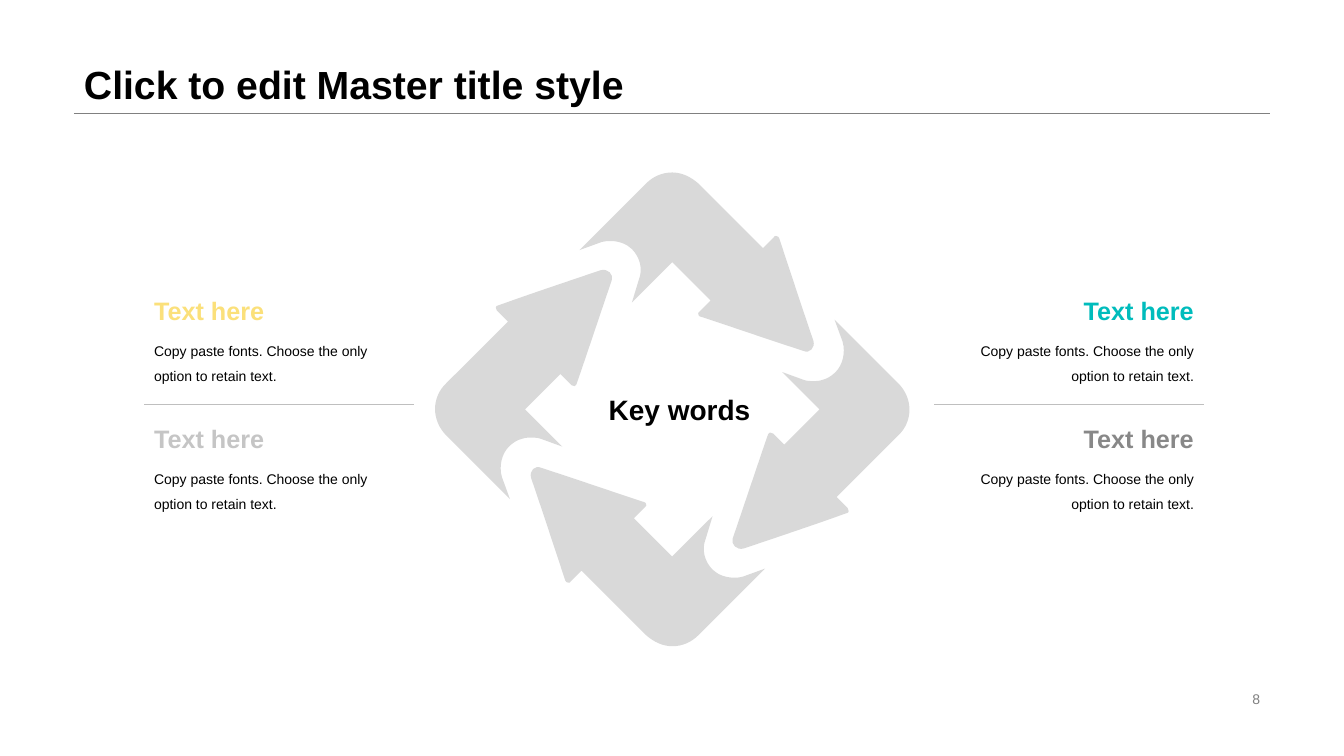
from dataclasses import dataclass

from lxml import etree
from pptx import Presentation
from pptx import util as u
from pptx.dml.color import RGBColor
from pptx.enum import shapes, text
from pptx.oxml.ns import qn

prs = Presentation()
prs.slide_width, prs.slide_height = u.Inches(13.33), u.Inches(7.5)
COL, ROW = prs.slide_width / 100, prs.slide_height / 100
LEFT, CENTER, RIGHT = text.PP_ALIGN.LEFT, text.PP_ALIGN.CENTER, text.PP_ALIGN.RIGHT
TOP, MIDDLE, BOTTOM = text.MSO_ANCHOR.TOP, text.MSO_ANCHOR.MIDDLE, text.MSO_ANCHOR.BOTTOM
Point = tuple[float, float]


@dataclass
class Style:
    size: float
    color: str = "000000"
    bold: bool = False
    align: text.PP_ALIGN = LEFT
    anchor: text.MSO_ANCHOR = TOP
    spacing: float | None = None
    wrap: bool = True


@dataclass
class Topic:
    col: float
    row: float
    color: str
    align: text.PP_ALIGN


@dataclass
class Arrow:
    """Outline in inches from the cycle's centre: a segment of one point is
    straight, one of three points is a Bezier curve."""
    start: Point
    segments: list[list[Point]]


BODY = "Copy paste fonts. Choose the only option to retain text."
LEFT_COL, RIGHT_COL = 10.73, 71.57
UPPER_ROW, LOWER_ROW = 38.4, 55.33
TOPIC_WIDTH, RULE_WIDTH, RULE_ROW = 18, 20.05, 53.5
TOPICS = [
    Topic(LEFT_COL, UPPER_ROW, "FBE07A", LEFT),
    Topic(LEFT_COL, LOWER_ROW, "C5C5C5", LEFT),
    Topic(RIGHT_COL, UPPER_ROW, "00BCBC", RIGHT),
    Topic(RIGHT_COL, LOWER_ROW, "888888", RIGHT),
]

TOP_ARROW = Arrow((0, -2.35), [
    [(.09, -2.35), (.18, -2.31), (.26, -2.24)],
    [(.9, -1.6)], [(1.01, -1.71)],
    [(1.01, -1.72), (1.02, -1.72), (1.03, -1.72)],
    [(1.05, -1.72), (1.05, -1.71), (1.06, -1.7)],
    [(1.09, -1.61), (1.29, -1), (1.4, -.68)],
    [(1.42, -.61), (1.36, -.55), (1.3, -.58)],
    [(.87, -.72), (.38, -.89), (.28, -.92)],
    [(.27, -.92), (.26, -.93), (.26, -.94)],
    [(.25, -.95), (.26, -.96), (.27, -.97)],
    [(.38, -1.08)], [(0, -1.46)], [(-.4, -1.06)], [(-.33, -1.29)],
    [(-.29, -1.39), (-.32, -1.51), (-.4, -1.59)],
    [(-.45, -1.64), (-.53, -1.67), (-.61, -1.67)],
    [(-.64, -1.67), (-.67, -1.67), (-.7, -1.66)],
    [(-.92, -1.58)], [(-.26, -2.24)],
    [(-.19, -2.31), (-.1, -2.35), (0, -2.35)],
])
RIGHT_ARROW = Arrow((1.61, -.89), [
    [(2.24, -.26)],
    [(2.39, -.11), (2.39, .12), (2.24, .26)],
    [(1.63, .87)], [(1.74, .98)],
    [(1.75, .99), (1.75, 1), (1.75, 1.01)],
    [(1.75, 1.02), (1.74, 1.03), (1.73, 1.03)],
    [(1.61, 1.07), (1.69, 1.05), (.71, 1.38)],
    [(.64, 1.4), (.58, 1.34), (.6, 1.28)],
    [(.73, .9), (.91, .36), (.95, .25)],
    [(.95, .24), (.96, .24), (.97, .23)],
    [(.98, .23), (.99, .23), (1, .24)],
    [(1.11, .35)], [(1.46, 0)], [(1.09, -.37)], [(1.31, -.29)],
    [(1.34, -.28), (1.38, -.28), (1.41, -.28)],
    [(1.49, -.28), (1.56, -.31), (1.62, -.37)],
    [(1.69, -.44), (1.72, -.56), (1.69, -.67)],
])


def rgb(color: str) -> RGBColor:
    return RGBColor.from_string(color)


def place(sp, col: float, row: float, cols: float, rows: float) -> None:
    sp.left, sp.top = round(col * COL), round(row * ROW)
    sp.width, sp.height = round(cols * COL), round(rows * ROW)


def write(sp, words: str, style: Style) -> None:
    tf = sp.text_frame
    tf.text = words
    tf.auto_size = text.MSO_AUTO_SIZE.NONE
    tf.word_wrap, tf.vertical_anchor = style.wrap, style.anchor
    p = tf.paragraphs[0]
    p.alignment, p.line_spacing = style.align, style.spacing
    font = p.runs[0].font
    font.name, font.size, font.bold = "Arial", u.Pt(style.size), style.bold
    font.color.rgb = rgb(style.color)


def add_text(s, words: str, col: float, row: float, cols: float, rows: float,
             style: Style) -> None:
    sp = s.shapes.add_textbox(0, 0, 0, 0)
    place(sp, col, row, cols, rows)
    write(sp, words, style)


def add_rule(s, col: float, row: float, cols: float, color: str, width: float) -> None:
    y = round(row * ROW)
    line = s.shapes.add_connector(shapes.MSO_CONNECTOR.STRAIGHT,
                                  round(col * COL), y, round((col + cols) * COL), y)
    line.line.color.rgb, line.line.width = rgb(color), u.Pt(width)
    etree.SubElement(line._element.spPr, qn("a:effectLst"))


def bend(sp, segments: list[list[Point]]) -> None:
    """Join the line steps of each three-point segment into one curve."""
    steps = iter(list(sp._element.iter(qn("a:lnTo"))))
    for segment in segments:
        first, *others = [next(steps) for _ in segment]
        if others:
            first.tag = qn("a:cubicBezTo")
        for step in others:
            first.append(step[0])
            step.getparent().remove(step)


def add_cycle(s, col: float, row: float, color: str) -> None:
    """Draw the top and right arrows, then both again turned by 180 degrees."""
    def locate(point: Point, sign: int) -> Point:
        x, y = point
        return (round(col * COL + sign * u.Inches(x)),
                round(row * ROW + sign * u.Inches(y)))

    turns = [(arrow, sign) for sign in (1, -1) for arrow in (TOP_ARROW, RIGHT_ARROW)]
    builder = s.shapes.build_freeform(*locate(TOP_ARROW.start, 1))
    for i, (arrow, sign) in enumerate(turns):
        if i:
            builder.move_to(*locate(arrow.start, sign))
        builder.add_line_segments([locate(point, sign) for segment in arrow.segments
                                   for point in segment])
    sp = builder.convert_to_shape()
    bend(sp, [segment for arrow, _ in turns for segment in arrow.segments])
    sp.shadow.inherit = False
    sp.fill.solid()
    sp.fill.fore_color.rgb = rgb(color)
    sp.line.fill.background()


def add_topic(s, topic: Topic) -> None:
    add_text(s, BODY, topic.col, topic.row + 5.15, TOPIC_WIDTH, 8.2,
             Style(10, align=topic.align, spacing=1.5))
    add_text(s, "Text here", topic.col, topic.row, TOPIC_WIDTH, 5.1,
             Style(18, topic.color, True, topic.align))


def main() -> None:
    s = prs.slides.add_slide(prs.slide_layouts[5])
    add_rule(s, 5.5, 15, 89, "808080", 0.25)
    place(s.shapes.title, 5.5, 0, 89, 15)
    write(s.shapes.title, "Click to edit Master title style",
          Style(28, bold=True, anchor=BOTTOM, spacing=0.9))
    add_text(s, "8", 70.65, 90.9, 23.85, 3.1,
             Style(10, "808080", align=RIGHT, anchor=MIDDLE))
    for col in (RIGHT_COL + TOPIC_WIDTH - RULE_WIDTH, LEFT_COL):
        add_rule(s, col, RULE_ROW, RULE_WIDTH, "BFBFBF", 0.5)
    add_cycle(s, 50.02, 54.15, "D9D9D9")
    add_text(s, "Key words", 44.66, 50.4, 11.8, 7.6,
             Style(20, bold=True, align=CENTER, anchor=MIDDLE, wrap=False))
    for topic in TOPICS:
        add_topic(s, topic)
    prs.save("out.pptx")


if __name__ == "__main__":
    main()
